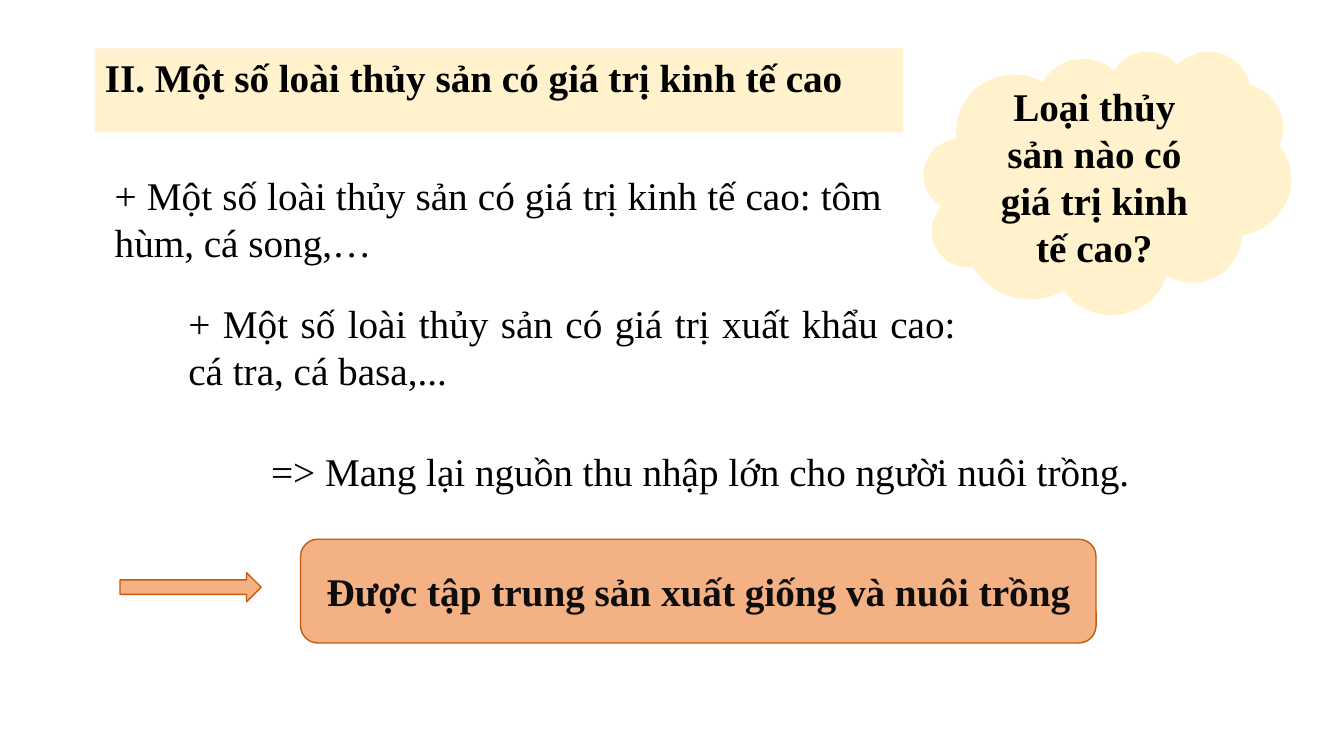
"""Build a slide on aquatic species of high economic value."""
from pptx import Presentation
from pptx.dml.color import RGBColor
from pptx.enum.shapes import MSO_SHAPE
from pptx.enum.text import MSO_ANCHOR, MSO_AUTO_SIZE, PP_ALIGN
from pptx.util import Inches, Pt

CLOUD, ROUND, ARROW = MSO_SHAPE.CLOUD, MSO_SHAPE.ROUNDED_RECTANGLE, MSO_SHAPE.RIGHT_ARROW
TOP, MIDDLE = MSO_ANCHOR.TOP, MSO_ANCHOR.MIDDLE
LEFT, CENTER, JUSTIFY = PP_ALIGN.LEFT, PP_ALIGN.CENTER, PP_ALIGN.JUSTIFY
FIXED, GROW = MSO_AUTO_SIZE.NONE, MSO_AUTO_SIZE.SHAPE_TO_FIT_TEXT
COLORS = {"cream": "FFF2CC", "peach": "F4B183", "rust": "C55A11",
          "black": "000000", "ink": "0D0D0D"}

deck = Presentation()
deck.slide_width, deck.slide_height = Inches(13.33), Inches(7.5)
slide = deck.slides.add_slide(deck.slide_layouts[5])
shapes = slide.shapes


def place(x, y, w, h):
    """Turn percent shares of the slide into lengths."""
    wide, high = deck.slide_width / 100, deck.slide_height / 100
    return int(x * wide), int(y * high), int(w * wide), int(h * high)


def write(shape, text, align, anchor, bold, color="black", size=FIXED):
    """Put one styled run into a shape."""
    frame = shape.text_frame
    frame.word_wrap = True
    frame.auto_size = size
    frame.vertical_anchor = anchor
    para = frame.paragraphs[0]
    para.alignment = align
    run = para.add_run()
    run.text = text
    font = run.font
    font.name, font.size, font.bold = "Times New Roman", Pt(28), bold
    font.color.rgb = RGBColor.from_string(COLORS[color])


title = shapes.title
title.left, title.top, title.width, title.height = place(7.05, 6.4, 60.17, 7.6)
title.fill.solid()
title.fill.fore_color.rgb = RGBColor.from_string(COLORS["cream"])
write(title, "II. Một số loài thủy sản có giá trị kinh tế cao", LEFT, TOP, True, size=GROW)

notes = [
    (7.8, 22, 58.59, 13.87, "+ Một số loài thủy sản có giá trị kinh tế cao: tôm hùm, cá song,…"),
    (13.28, 38.93, 58.59, 13.87, "+ Một số loài thủy sản có giá trị xuất khẩu cao: cá tra, cá basa,..."),
    (19.43, 58.53, 71.49, 7.6, "=> Mang lại nguồn thu nhập lớn cho người nuôi trồng."),
]
for *area, text in notes:
    write(shapes.add_textbox(*place(*area)), text, JUSTIFY, TOP, False, size=GROW)

figures = [
    (CLOUD, (68.78, 6.8, 27.23, 34.67), "cream", "cream", "black",
     "Loại thủy sản nào có giá trị kinh tế cao?"),
    (ROUND, (22.36, 71.33, 59.19, 13.73), "peach", "rust", "ink",
     "Được tập trung sản xuất giống và nuôi trồng"),
    (ARROW, (8.93, 75.73, 10.5, 3.87), "peach", "rust", "ink", ""),
]
for kind, area, fill, edge, color, text in figures:
    shape = shapes.add_shape(kind, *place(*area))
    shape.shadow.inherit = False
    shape.fill.solid()
    shape.fill.fore_color.rgb = RGBColor.from_string(COLORS[fill])
    shape.line.color.rgb = RGBColor.from_string(COLORS[edge])
    shape.line.width = Pt(1)
    if text:
        write(shape, text, CENTER, MIDDLE, True, color)

deck.save("out.pptx")
